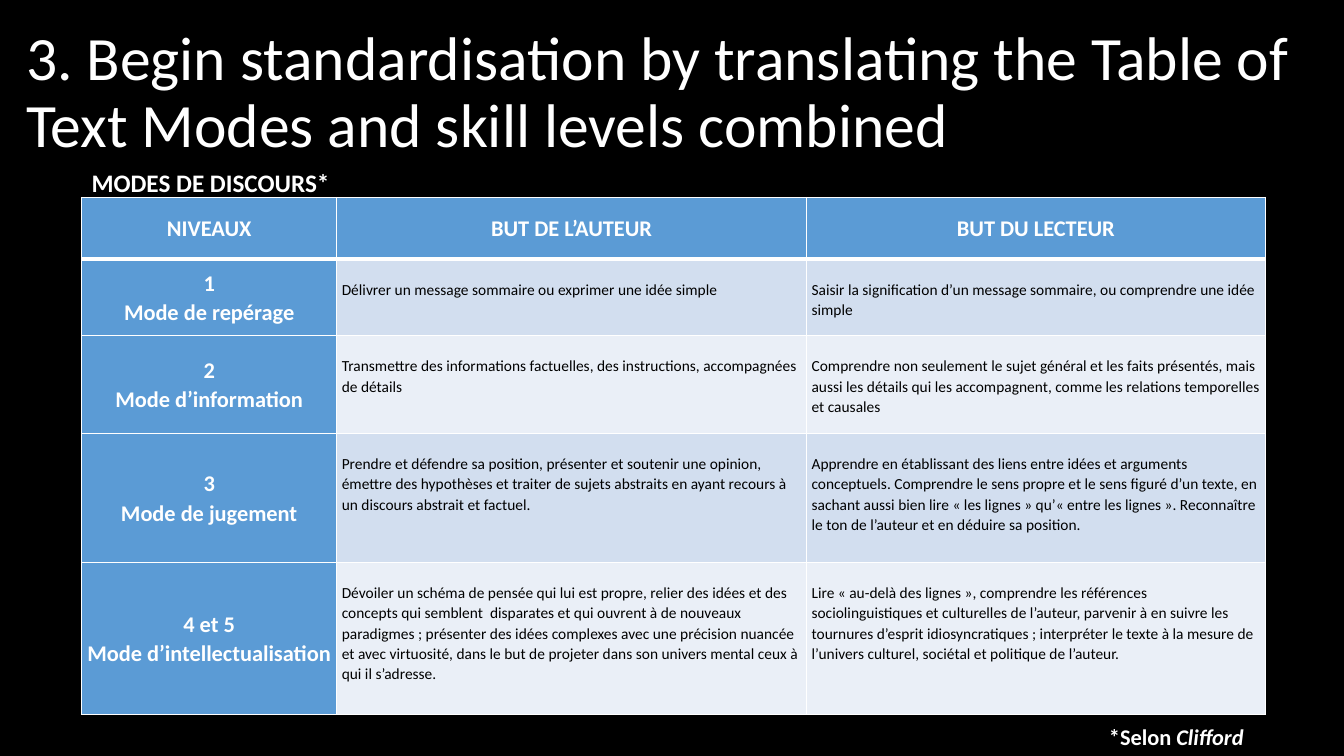
from lxml import etree
from pptx import Presentation
from pptx.dml.color import RGBColor
from pptx.enum.text import MSO_ANCHOR, PP_ALIGN
from pptx.oxml.ns import qn
from pptx.util import Emu, Pt

PX = 9144  # EMU per px, 100 px to the inch
LEFT, CENTER = PP_ALIGN.LEFT, PP_ALIGN.CENTER
TOP, MIDDLE = MSO_ANCHOR.TOP, MSO_ANCHOR.MIDDLE

COLORS = {
    "background": "000000",
    "light": "FFFFFF",
    "dark": "000000",
    "heading": "5B9BD5",
    "odd": "D2DEEF",
    "even": "EAEFF7",
}

COLUMN_WIDTHS = [253, 466, 455]
ROW_HEIGHTS = [61, 76, 97, 128, 151]
HEADINGS = ["NIVEAUX", "BUT DE L’AUTEUR", "BUT DU LECTEUR"]
LEVELS = [
    (
        ["1", "Mode de repérage"],
        "Délivrer un message sommaire ou exprimer une idée simple",
        "Saisir la signification d’un message sommaire, ou comprendre une idée simple",
    ),
    (
        ["2", "Mode d’information"],
        "Transmettre des informations factuelles, des instructions, accompagnées "
        "de détails",
        "Comprendre non seulement le sujet général et les faits présentés, mais "
        "aussi les détails qui les accompagnent, comme les relations temporelles "
        "et causales",
    ),
    (
        ["3", "Mode de jugement"],
        "Prendre et défendre sa position, présenter et soutenir une opinion, "
        "émettre des hypothèses et traiter de sujets abstraits en ayant recours à "
        "un discours abstrait et factuel.",
        "Apprendre en établissant des liens entre idées et arguments conceptuels. "
        "Comprendre le sens propre et le sens figuré d’un texte, en sachant aussi "
        "bien lire « les lignes » qu’« entre les lignes ». Reconnaître le ton de "
        "l’auteur et en déduire sa position.",
    ),
    (
        ["4 et 5", "Mode d’intellectualisation"],
        "Dévoiler un schéma de pensée qui lui est propre, relier des idées et des "
        "concepts qui semblent  disparates et qui ouvrent à de nouveaux "
        "paradigmes ; présenter des idées complexes avec une précision nuancée et "
        "avec virtuosité, dans le but de projeter dans son univers mental ceux à "
        "qui il s’adresse.",
        "Lire « au-delà des lignes », comprendre les références "
        "sociolinguistiques et culturelles de l’auteur, parvenir à en suivre les "
        "tournures d’esprit idiosyncratiques ; interpréter le texte à la mesure de "
        "l’univers culturel, sociétal et politique de l’auteur.",
    ),
]


def px(length):
    return Emu(length * PX)


def rgb(name):
    return RGBColor.from_string(COLORS[name])


class SlideBuilder:
    font = "Calibri"

    def __init__(self, slide):
        self.slide = slide
        slide.background.fill.solid()
        slide.background.fill.fore_color.rgb = rgb("background")

    def fill_text(self, frame, paragraphs, size, color="light", bold=False,
                  align=LEFT, spacing=1.0):
        """Fill a text frame; each paragraph is a string or a list of (text, italic)."""
        for index, content in enumerate(paragraphs):
            paragraph = frame.add_paragraph() if index else frame.paragraphs[0]
            paragraph.alignment = align
            paragraph.line_spacing = spacing
            runs = [(content, False)] if isinstance(content, str) else content
            for text, italic in runs:
                run = paragraph.add_run()
                run.text = text
                run.font.name = self.font
                run.font.size = Pt(size)
                run.font.bold = bold
                run.font.italic = italic
                run.font.color.rgb = rgb(color)

    def text(self, left, top, width, height, paragraphs, anchor=TOP, **style):
        box = self.slide.shapes.add_textbox(px(left), px(top), px(width), px(height))
        box.text_frame.word_wrap = True
        box.text_frame.vertical_anchor = anchor
        self.fill_text(box.text_frame, paragraphs, **style)

    def table(self, left, top, widths, heights):
        frame = self.slide.shapes.add_table(
            len(heights), len(widths), px(left), px(top),
            px(sum(widths)), px(sum(heights)))
        table = frame.table
        table.first_row = table.horz_banding = False
        for column, width in zip(table.columns, widths):
            column.width = px(width)
        for row, height in zip(table.rows, heights):
            row.height = px(height)
        return table

    def border(self, cell, side, points):
        line = etree.SubElement(cell._tc.get_or_add_tcPr(), qn(f"a:ln{side}"),
                                w=str(Pt(points)))
        fill = etree.SubElement(line, qn("a:solidFill"))
        etree.SubElement(fill, qn("a:srgbClr"), val=COLORS["light"])

    def cell(self, cell, paragraphs, fill, top_line=1, bottom_line=1,
             anchor=MIDDLE, inset_top=0, **style):
        for side, points in zip("LRTB", (1, 1, top_line, bottom_line)):
            self.border(cell, side, points)
        cell.fill.solid()
        cell.fill.fore_color.rgb = rgb(fill)
        cell.margin_left = cell.margin_right = px(5)
        cell.margin_top, cell.margin_bottom = px(inset_top), 0
        cell.vertical_anchor = anchor
        self.fill_text(cell.text_frame, paragraphs, spacing=1.07, **style)


def main():
    deck = Presentation()
    deck.slide_width, deck.slide_height = px(1333), px(750)
    builder = SlideBuilder(deck.slides.add_slide(deck.slide_layouts[6]))

    builder.text(16, 21, 1297, 145,
                 ["3. Begin standardisation by translating the Table of "
                  "Text Modes and skill levels combined"],
                 anchor=MIDDLE, size=44, spacing=0.9)

    modes = builder.table(81, 196, COLUMN_WIDTHS, ROW_HEIGHTS)
    heading = dict(fill="heading", size=16, bold=True, align=CENTER)
    for column, label in enumerate(HEADINGS):
        builder.cell(modes.cell(0, column), [label], bottom_line=3, **heading)
    for row, (level, *purposes) in enumerate(LEVELS, start=1):
        top_line = 3 if row == 1 else 1
        builder.cell(modes.cell(row, 0), level, top_line=top_line, **heading)
        for column, purpose in enumerate(purposes, start=1):
            builder.cell(modes.cell(row, column), [purpose],
                         fill="odd" if row % 2 else "even", top_line=top_line,
                         anchor=TOP, inset_top=20, size=11, color="dark")

    builder.text(81, 161, 324, 40, ["MODES DE DISCOURS*"], size=18, bold=True)
    builder.text(1090, 713, 322, 37, [[("*Selon ", False), ("Clifford", True)]],
                 size=16, bold=True)
    deck.save("out.pptx")


if __name__ == "__main__":
    main()
